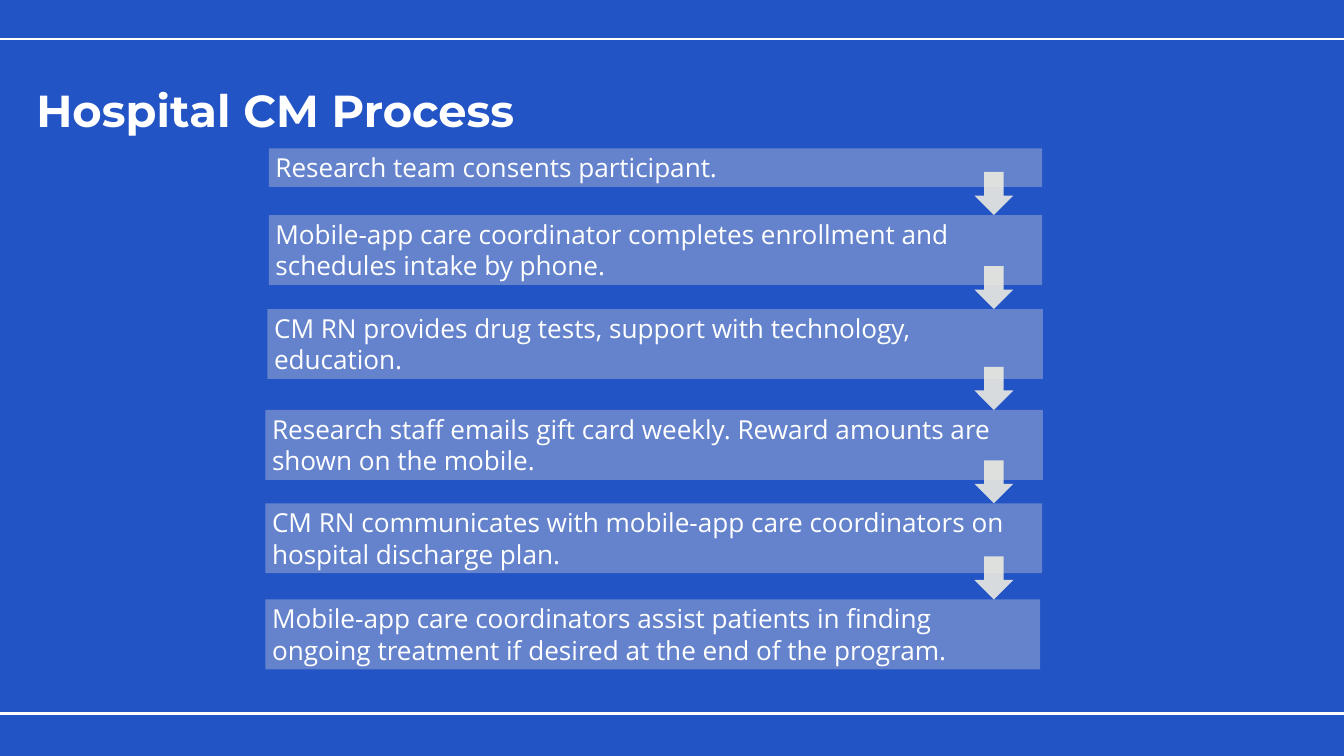
from lxml.etree import SubElement
from pptx import Presentation
from pptx.dml.color import RGBColor
from pptx.enum.shapes import MSO_CONNECTOR as Connector, MSO_SHAPE as Shape
from pptx.enum.text import MSO_ANCHOR as Anchor, MSO_AUTO_SIZE as AutoSize, PP_ALIGN as Align
from pptx.oxml.ns import qn
from pptx.util import Emu, Pt

TITLE = "Hospital CM Process"
# left, top, width, height, text
STEPS = [
    (400, 221, 1151, 57, "Research team consents participant."),
    (400, 320, 1151, 104, "Mobile-app care coordinator completes enrollment and schedules intake by phone."),
    (398, 460, 1154, 104, "CM RN provides drug tests, support with technology, education."),
    (395, 610, 1157, 104, "Research staff emails gift card weekly. Reward amounts are shown on the mobile."),
    (395, 749, 1156, 104, "CM RN communicates with mobile-app care coordinators on hospital discharge plan."),
    (395, 892, 1153, 104, "Mobile-app care coordinators assist patients in finding ongoing treatment "
                          "if desired at the end of the program."),
]
# start x, end x, y
RULES = [(-6, 2006, 58), (0, 2012, 1062)]
ARROW_LEFT, ARROW_WIDTH, ARROW_HEIGHT = 1450, 58, 64

THEME = {
    "background": "2254C5", "text": "FFFFFF", "step": "D9D9D9", "arrow": "EEECE1",
    "step_alpha": 36, "arrow_alpha": 89,
    "title_font": "Montserrat", "title_size": 48, "title_spacing": 99.1,
    "body_font": "Open Sans", "body_size": 28, "rule_width": 3,
}


def px(value):
    """Turn px, 100 to the inch, into EMU."""
    return Emu(value * 9144)


def color(name):
    return RGBColor.from_string(THEME[name])


def style_text(paragraph, kind, bold=False):
    paragraph.alignment = Align.LEFT
    for span in paragraph.runs:
        span.font.name = THEME[f"{kind}_font"]
        span.font.size = Pt(THEME[f"{kind}_size"])
        span.font.bold = bold
        span.font.color.rgb = color("text")


def add_block(page, preset, place, kind):
    """Add a borderless, translucent preset shape."""
    block = page.shapes.add_shape(preset, *map(px, place))
    block.shadow.inherit = False
    block.line.fill.background()
    block.fill.solid()
    block.fill.fore_color.rgb = color(kind)
    tint = block.fill._xPr.find(".//" + qn("a:srgbClr"))
    SubElement(tint, qn("a:alpha"), val=str(THEME[f"{kind}_alpha"] * 1000))
    return block


def add_title(page):
    title = page.shapes.title
    title.left, title.top, title.width, title.height = map(px, (54, 66, 1892, 121))
    frame = title.text_frame
    frame.text = TITLE
    frame.word_wrap = True
    frame.auto_size = AutoSize.NONE
    frame.vertical_anchor = Anchor.TOP
    frame.margin_left = frame.margin_top = frame.margin_right = frame.margin_bottom = 0
    frame.paragraphs[0].line_spacing = Pt(THEME["title_spacing"])
    style_text(frame.paragraphs[0], "title", bold=True)


def add_rule(page, start, end, y):
    rule = page.shapes.add_connector(Connector.STRAIGHT, px(start), px(y), px(end), px(y))
    rule.line.color.rgb = color("text")
    rule.line.width = Pt(THEME["rule_width"])
    SubElement(rule._element.spPr, qn("a:effectLst"))


def add_step(page, *place, text):
    frame = add_block(page, Shape.RECTANGLE, place, "step").text_frame
    frame.text = text
    frame.word_wrap = True
    frame.auto_size = AutoSize.SHAPE_TO_FIT_TEXT
    frame.vertical_anchor = Anchor.TOP
    style_text(frame.paragraphs[0], "body")


def main():
    deck = Presentation()
    deck.slide_width, deck.slide_height = px(2000), px(1125)
    page = deck.slides.add_slide(deck.slide_layouts[5])
    page.background.fill.solid()
    page.background.fill.fore_color.rgb = color("background")

    add_title(page)
    for rule in RULES:
        add_rule(page, *rule)
    for *place, text in STEPS:
        add_step(page, *place, text=text)
    # Each arrow's tip touches the top of the next step.
    for _, top, *_ in STEPS[1:]:
        place = (ARROW_LEFT, top - ARROW_HEIGHT, ARROW_WIDTH, ARROW_HEIGHT)
        add_block(page, Shape.DOWN_ARROW, place, "arrow")

    deck.save("out.pptx")


if __name__ == "__main__":
    main()
